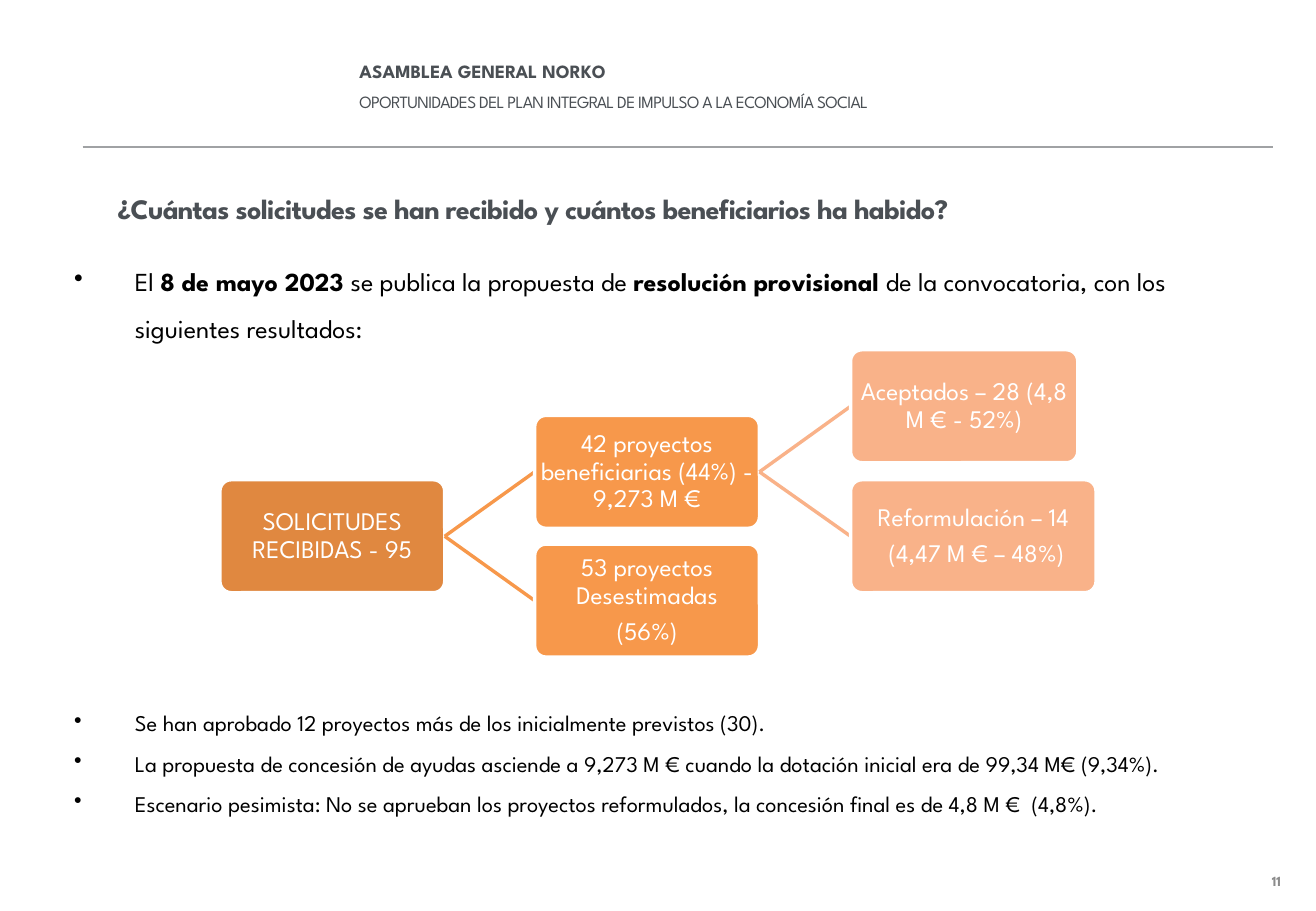
from lxml.etree import SubElement
from pptx import Presentation
from pptx.dml.color import RGBColor
from pptx.enum.shapes import MSO_CONNECTOR, MSO_SHAPE
from pptx.enum.text import MSO_ANCHOR as Anchor, PP_ALIGN as Align
from pptx.oxml.ns import qn
from pptx.util import Emu, Pt

PX = 9144  # one hundredth of an inch
WHITE = RGBColor(0xFF, 0xFF, 0xFF)
BLACK = RGBColor(0, 0, 0)
SLATE = RGBColor(0x4A, 0x4F, 0x54)
RULE_GRAY = RGBColor(0xA0, 0xA2, 0xA4)
PAGE_GRAY = RGBColor(0x8C, 0x8C, 0x8C)
ORANGE_DARK = RGBColor(0xE0, 0x88, 0x40)
ORANGE = RGBColor(0xF7, 0x98, 0x4B)
ORANGE_LIGHT = RGBColor(0xF9, 0xB2, 0x89)

TREE_COLUMNS = (181, 440, 700)
TREE_TOP, HALF_ROW = 288, 53.5
BOX_WIDTH, BOX_HEIGHT = 185, 93


def px(*lengths):
    return [Emu(length * PX) for length in lengths]


def write(frame, paragraphs, size, color, font, bold=False, align=Align.LEFT,
          leading=1.0, after=0, spacing=0, hanging=0, bullet=None):
    """Fill the frame; within a paragraph, text between asterisks is bold."""
    for index, content in enumerate(paragraphs):
        paragraph = frame.paragraphs[0] if index == 0 else frame.add_paragraph()
        properties = paragraph._p.get_or_add_pPr()
        if hanging:
            properties.set("marL", str(hanging * PX))
            properties.set("indent", str(-hanging * PX))
        if bullet:
            SubElement(properties, qn("a:buChar")).set("char", bullet)
        paragraph.alignment = align
        paragraph.line_spacing = leading
        paragraph.space_after = Pt(after)
        for position, part in enumerate(content.split("*")):
            if not part:
                continue
            run = paragraph.add_run()
            run.text = part
            run.font.name = font
            run.font.size = Pt(size)
            run.font.bold = bold or position % 2 == 1
            run.font.color.rgb = color
            if spacing:
                run._r.get_or_add_rPr().set("spc", str(round(spacing * 100)))


class SlideBuilder:
    font = "League Spartan"

    def __init__(self, slide):
        self.shapes = slide.shapes

    def text(self, left, top, width, height, paragraphs, anchor=Anchor.TOP,
             inset=(10, 5), **style):
        frame = self.shapes.add_textbox(*px(left, top, width, height)).text_frame
        self.prepare(frame, anchor, inset)
        write(frame, paragraphs, font=self.font, **style)

    def prepare(self, frame, anchor, inset):
        frame.word_wrap = True
        frame.vertical_anchor = anchor
        frame.margin_left = frame.margin_right = Emu(inset[0] * PX)
        frame.margin_top = frame.margin_bottom = Emu(inset[1] * PX)

    def line(self, start, end, color, weight):
        connector = self.shapes.add_connector(
            MSO_CONNECTOR.STRAIGHT, *px(*start), *px(*end))
        connector.line.color.rgb = color
        connector.line.width = Pt(weight)
        SubElement(connector._element.spPr, qn("a:effectLst"))
        return connector

    def node(self, column, row, lines, color, width=BOX_WIDTH, parent=None):
        """Place a tree box, with its branch lying between parent and box."""
        left = TREE_COLUMNS[column]
        top = TREE_TOP + round(HALF_ROW * row)
        if parent:
            middle = (left, top + BOX_HEIGHT // 2)
            branch = self.line(middle, middle, color, 2)
            branch.begin_connect(parent, 3)
        box = self.shapes.add_shape(MSO_SHAPE.ROUNDED_RECTANGLE,
                                    *px(left, top, width, BOX_HEIGHT))
        box.adjustments[0] = 0.1
        box.shadow.inherit = False
        box.fill.solid()
        box.fill.fore_color.rgb = color
        box.line.color.rgb = WHITE
        box.line.width = Pt(2)
        self.prepare(box.text_frame, Anchor.MIDDLE, (1, 1))
        write(box.text_frame, lines, size=15, color=WHITE, font=self.font,
              align=Align.CENTER, leading=0.9, after=5.25)
        if parent:
            branch.end_connect(box, 1)
        return box


def main():
    deck = Presentation()
    deck.slide_width, deck.slide_height = px(1083, 750)
    page = SlideBuilder(deck.slides.add_slide(deck.slide_layouts[6]))

    page.text(286, 48, 596, 33, ["ASAMBLEA GENERAL NORKO"],
              size=11.1, color=SLATE, bold=True, leading=0.8)
    page.text(286, 72, 596, 32,
              ["OPORTUNIDADES DEL PLAN INTEGRAL DE IMPULSO A LA ECONOMÍA SOCIAL"],
              size=10.2, color=SLATE, leading=0.9, spacing=-0.4)
    page.line((68, 121), (1048, 121), RULE_GRAY, 0.75)
    page.text(87, 151, 931, 39,
              ["¿Cuántas solicitudes se han recibido y cuántos beneficiarios ha habido?"],
              anchor=Anchor.BOTTOM, size=16.7, color=SLATE, bold=True,
              leading=2.0, spacing=-0.4)
    page.text(811, 716, 253, 19, ["11"], anchor=Anchor.MIDDLE,
              size=8.3, color=PAGE_GRAY, bold=True, align=Align.RIGHT)

    bullets = dict(inset=(0, 0), color=BLACK, leading=1.5, hanging=50, bullet="•")
    page.text(61, 206, 966, 78,
              ["El *8 de mayo 2023 *se publica la propuesta de *resolución provisional "
               "*de la convocatoria, con los siguientes resultados:"],
              size=15.4, **bullets)

    received = page.node(0, 2, ["SOLICITUDES RECIBIDAS - 95"], ORANGE_DARK)
    funded = page.node(1, 1, ["42 proyectos beneficiarias (44%) - 9,273 M €"],
                       ORANGE, parent=received)
    page.node(2, 0, ["Aceptados – 28 (4,8 M € - 52%)"], ORANGE_LIGHT,
              width=187, parent=funded)
    page.node(2, 2, ["Reformulación – 14", " (4,47 M € – 48%)"], ORANGE_LIGHT,
              width=202, parent=funded)
    page.node(1, 3, ["53 proyectos Desestimadas", "(56%)"], ORANGE, parent=received)

    page.text(61, 573, 956, 163,
              ["Se han aprobado 12 proyectos más de los inicialmente previstos (30).",
               "La propuesta de concesión de ayudas asciende a 9,273 M € cuando "
               "la dotación inicial era de 99,34 M€ (9,34%).",
               "Escenario pesimista: No se aprueban los proyectos reformulados, "
               "la concesión final es de 4,8 M €  (4,8%)."],
              size=13.3, **bullets)
    deck.save("out.pptx")


if __name__ == "__main__":
    main()
